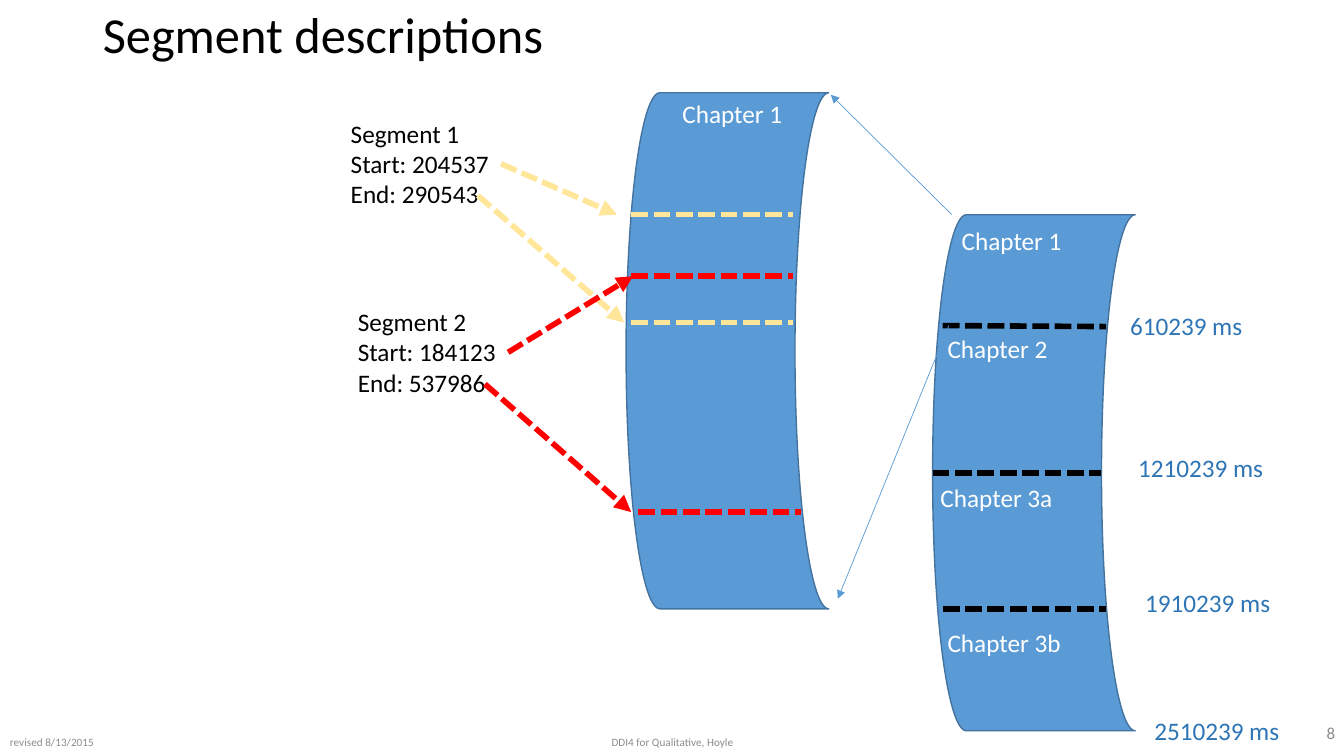
import pptx
import pptx.util
import pptx.dml.color
import pptx.enum.dml
import pptx.enum.shapes
import pptx.enum.text
import pptx.oxml
import pptx.oxml.ns

Inches = pptx.util.Inches
Align = pptx.enum.text.PP_ALIGN
Anchor = pptx.enum.text.MSO_ANCHOR
AutoSize = pptx.enum.text.MSO_AUTO_SIZE

BLACK, WHITE, GRAY = "000000", "FFFFFF", "8C8C8C"
BLUE, DARK_BLUE, TIME_BLUE = "5B9BD5", "43739E", "2E75B6"
YELLOW, RED = "FFE699", "FF0000"
STRIP_WIDTH, STRIP_HEIGHT = 2.01, 5.12
LABEL_HEIGHT = 0.4


def color(value):
    return pptx.dml.color.RGBColor.from_string(value)


def apply(target, values):
    for name, value in values.items():
        setattr(target, name, value)


def write(shape, lines, size, fill, frame_format, paragraph_format):
    frame = shape.text_frame
    apply(frame, frame_format)
    frame.text = "\n".join(lines)
    for paragraph in frame.paragraphs:
        apply(paragraph, paragraph_format)
        font = paragraph.runs[0].font
        apply(font, {"name": "Calibri", "size": pptx.util.Pt(size)})
        font.color.rgb = color(fill)


def add_title(slide, text):
    title = slide.shapes.title
    apply(title, {"left": Inches(0.92), "top": Inches(0),
                  "width": Inches(11.5), "height": Inches(0.73)})
    write(title, [text], 36, BLACK,
          {"vertical_anchor": Anchor.MIDDLE, "word_wrap": True,
           "auto_size": AutoSize.NONE},
          {"alignment": Align.LEFT, "line_spacing": 0.9})


def add_footer(slide, text, box, size, alignment):
    footer = slide.shapes.add_textbox(*map(Inches, box))
    write(footer, [text], size, GRAY,
          {"vertical_anchor": Anchor.MIDDLE, "word_wrap": True},
          {"alignment": alignment})


def add_label(slide, lines, left, top, width, height, fill):
    label = slide.shapes.add_textbox(*map(Inches, (left, top, width, height)))
    write(label, lines, 18, fill,
          {"word_wrap": False, "auto_size": AutoSize.SHAPE_TO_FIT_TEXT},
          {"alignment": Align.LEFT})
    return label


def add_strip(slide, left, top):
    strip = slide.shapes.add_shape(
        pptx.enum.shapes.MSO_SHAPE.FLOWCHART_STORED_DATA,
        *map(Inches, (left, top, STRIP_WIDTH, STRIP_HEIGHT)))
    strip.shadow.inherit = False
    strip.fill.solid()
    strip.fill.fore_color.rgb = color(BLUE)
    strip.line.color.rgb = color(DARK_BLUE)
    strip.line.width = pptx.util.Pt(1)


def add_line(slide, start, end, stroke, width=4, dashed=True, arrow=False):
    connector = slide.shapes.add_connector(
        pptx.enum.shapes.MSO_CONNECTOR.STRAIGHT, *map(Inches, start + end))
    connector.line.color.rgb = color(stroke)
    connector.line.width = pptx.util.Pt(width)
    if dashed:
        connector.line.dash_style = pptx.enum.dml.MSO_LINE.SQUARE_DOT
    properties = connector.element.spPr
    namespace = pptx.oxml.ns.nsdecls("a")
    if arrow:
        properties.find(pptx.oxml.ns.qn("a:ln")).append(
            pptx.oxml.parse_xml(f'<a:tailEnd {namespace} type="triangle"/>'))
    properties.append(pptx.oxml.parse_xml(f"<a:effectLst {namespace}/>"))
    return connector


def add_segment(slide, lines, left, top, stroke, marks, arrows):
    for mark_left, mark_top in marks:
        add_line(slide, (mark_left, mark_top), (mark_left + 1.61, mark_top), stroke)
    label = add_label(slide, lines, left, top, 1.59, 1.01, BLACK)
    start_arrow, end_arrow = [
        add_line(slide, start, end, stroke, arrow=True) for start, end in arrows]
    start_arrow.begin_connect(label, 3)


def add_recording(slide):
    add_strip(slide, 9.25, 2.13)
    for start, end in [((9.35, 3.23), (10.97, 3.24)),
                       ((9.25, 4.69), (10.92, 4.69)),
                       ((9.35, 6.04), (10.97, 6.04))]:
        add_line(slide, start, end, BLACK)
    for text, left, top, width in [("Chapter 1", 9.44, 2.19, 1.2),
                                   ("Chapter 2", 9.3, 3.26, 1.2),
                                   ("Chapter 3a", 9.23, 4.74, 1.33),
                                   ("Chapter 3b", 9.3, 6.17, 1.34)]:
        add_label(slide, [text], left, top, width, LABEL_HEIGHT, WHITE)
    for text, left, top, width in [("610239 ms", 11.11, 3.03, 1.33),
                                   ("1210239 ms", 11.19, 4.44, 1.46),
                                   ("1910239 ms", 11.26, 5.78, 1.46),
                                   ("2510239 ms", 11.35, 7.05, 1.46)]:
        add_label(slide, [text], left, top, width, LABEL_HEIGHT, TIME_BLUE)


def add_chapter_detail(slide):
    add_strip(slide, 6.21, 0.92)
    add_label(slide, ["Chapter 1"], 6.67, 0.93, 1.2, LABEL_HEIGHT, WHITE)
    for start, end in [((9.44, 2.13), (8.24, 0.94)),
                       ((9.41, 3.23), (8.31, 5.94))]:
        add_line(slide, start, end, BLUE, width=0.5, dashed=False, arrow=True)


def main():
    presentation = pptx.Presentation()
    presentation.slide_width = Inches(13.33)
    presentation.slide_height = Inches(7.5)
    slide = presentation.slides.add_slide(presentation.slide_layouts[5])
    add_title(slide, "Segment descriptions")
    add_footer(slide, "revised 8/13/2015", (0, 7.23, 1.08, 0.26), 8, Align.LEFT)
    add_footer(slide, "DDI4 for Qualitative, Hoyle", (4.42, 7.23, 4.5, 0.26), 8,
               Align.CENTER)
    add_footer(slide, "8", (12.42, 7.11, 0.92, 0.32), 12, Align.RIGHT)
    add_recording(slide)
    add_chapter_detail(slide)
    add_segment(slide, ["Segment 1", "Start: 204537", "End: 290543"],
                3.38, 1.12, YELLOW, [(6.26, 2.13), (6.26, 3.2)],
                [((4.96, 1.62), (6.12, 2.13)), ((4.74, 1.94), (6.19, 3.2))])
    add_segment(slide, ["Segment 2", "Start: 184123", "End: 537986"],
                3.45, 2.99, RED, [(6.26, 2.74), (6.33, 5.08)],
                [((5.03, 3.5), (6.28, 2.74)), ((4.81, 3.81), (6.26, 5.08))])
    presentation.save("out.pptx")


if __name__ == "__main__":
    main()
